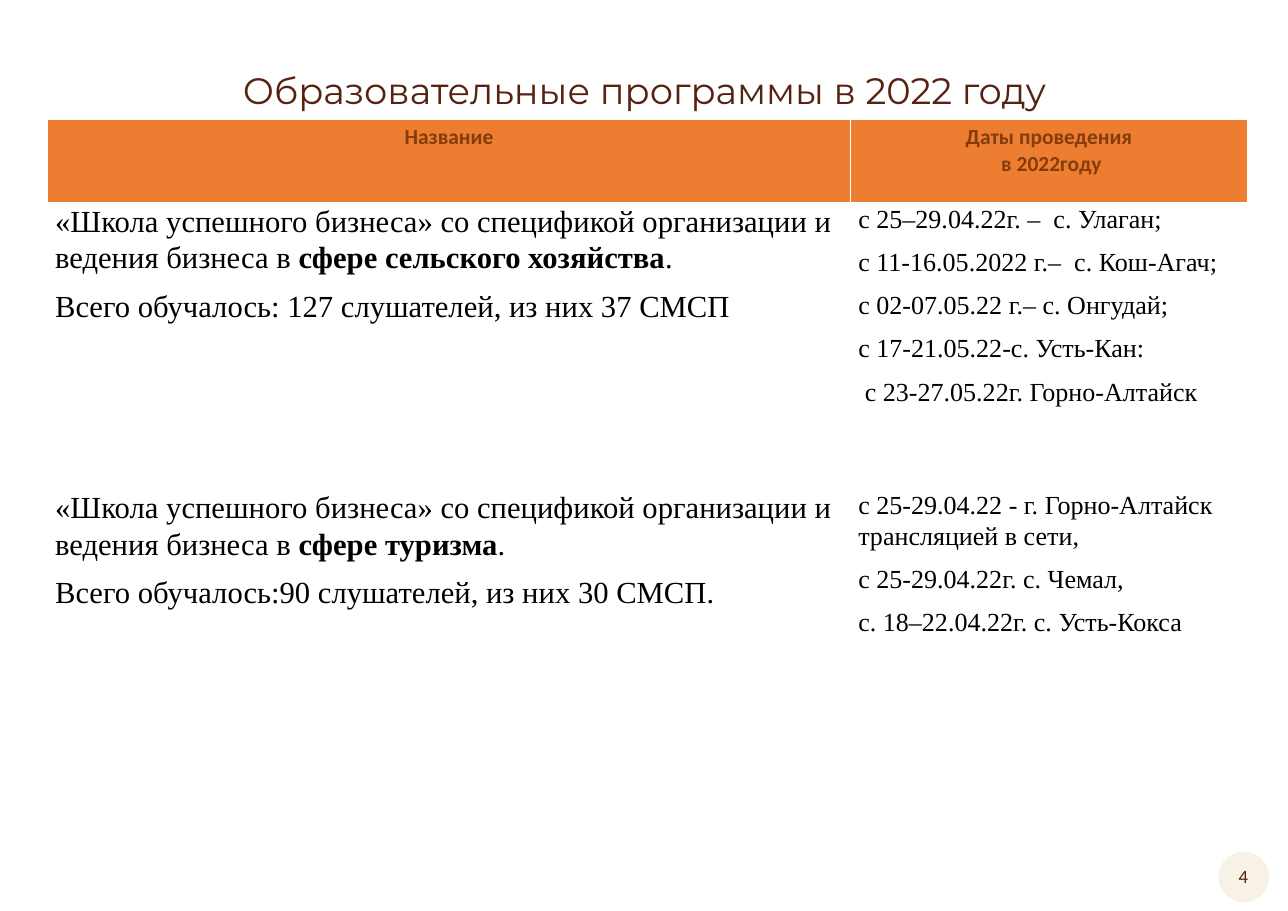
from pptx import Presentation
from pptx.dml.color import RGBColor
from pptx.enum.shapes import MSO_SHAPE
from pptx.enum.text import MSO_ANCHOR, MSO_AUTO_SIZE, PP_ALIGN
from pptx.util import Pt

COLORS = {
    "brown": "562212",
    "rust": "843C0B",
    "orange": "ED7D31",
    "cream": "F7F2E5",
    "black": "000000",
}


def apply_format(target, values):
    for name, value in values.items():
        setattr(target, name, value)


def add_runs(paragraph, texts, color, font_values, paragraph_values):
    apply_format(paragraph, paragraph_values)
    for index, text in enumerate(texts):
        run = paragraph.add_run()
        run.text = text
        run.font.color.rgb = RGBColor.from_string(COLORS[color])
        apply_format(run.font, font_values)
        if index == 1:
            run.font.bold = True


centered = {"alignment": PP_ALIGN.CENTER}
spaced = {"line_spacing": 1.07, "space_after": Pt(8), "alignment": PP_ALIGN.LEFT}
header_font = {"name": "Calibri", "size": Pt(14), "bold": True}
frame_values = {
    "word_wrap": True,
    "auto_size": MSO_AUTO_SIZE.NONE,
    "vertical_anchor": MSO_ANCHOR.TOP,
}

presentation = Presentation()
apply_format(presentation, {"slide_width": Pt(841.7), "slide_height": Pt(595.4)})
slide = presentation.slides.add_slide(presentation.slide_layouts[5])

badge = slide.shapes.add_shape(MSO_SHAPE.OVAL, Pt(796.3), Pt(556.6), Pt(33.1), Pt(33.1))
badge.shadow.inherit = False
badge.fill.solid()
badge.fill.fore_color.rgb = RGBColor.from_string(COLORS["cream"])
badge.line.fill.background()

page_number = slide.shapes.add_textbox(Pt(794.2), Pt(561.6), Pt(36.7), Pt(22.3))
apply_format(page_number.text_frame, frame_values)
add_runs(page_number.text_frame.paragraphs[0], ["4"], "brown",
         {"name": "Calibri", "size": Pt(12.3)}, centered)

title = slide.shapes.title
apply_format(title, {"left": Pt(119.5), "top": Pt(41), "width": Pt(603.4), "height": Pt(36)})
apply_format(title.text_frame, frame_values)
add_runs(title.text_frame.paragraphs[0], ["Образовательные программы в 2022 году"], "brown",
         {"name": "Montserrat", "size": Pt(24)}, centered)

headers = [["Название"], ["Даты проведения", " в 2022году"]]
school = "«Школа успешного бизнеса» со спецификой организации и ведения бизнеса в "
programs = [
    (
        [[school, "сфере сельского хозяйства", "."],
         ["Всего обучалось: 127 слушателей, из них 37 СМСП"]],
        [["с 25–29.04.22г. –  с. Улаган;"],
         ["с 11-16.05.2022 г.–  с. Кош-Агач;"],
         ["с 02-07.05.22 г.– с. Онгудай;"],
         ["с 17-21.05.22-с. Усть-Кан:"],
         [" с 23-27.05.22г. Горно-Алтайск"]],
    ),
    (
        [[school, "сфере туризма", "."],
         ["Всего обучалось:90 слушателей, из них 30 СМСП."]],
        [["с 25-29.04.22 - г. Горно-Алтайск трансляцией в сети,"],
         ["с 25-29.04.22г. с. Чемал,"],
         ["с. 18–22.04.22г. с. Усть-Кокса"]],
    ),
]
column_widths = [524.9, 259.2]
row_heights = [54.7, 187.2, 201.6]
body_sizes = [20, 17]

table = slide.shapes.add_table(
    len(row_heights), len(column_widths), Pt(31), Pt(77.8),
    Pt(sum(column_widths)), Pt(sum(row_heights))).table
table.horz_banding = False
for column, width in zip(table.columns, column_widths):
    column.width = Pt(width)
for row, height in zip(table.rows, row_heights):
    row.height = Pt(height)

for column_index, lines in enumerate(headers):
    cell = table.cell(0, column_index)
    cell.fill.solid()
    cell.fill.fore_color.rgb = RGBColor.from_string(COLORS["orange"])
    for index, line in enumerate(lines):
        frame = cell.text_frame
        paragraph = frame.add_paragraph() if index else frame.paragraphs[0]
        add_runs(paragraph, [line], "rust", header_font, centered)

cell_margins = {"margin_left": Pt(5), "margin_right": Pt(5), "margin_top": 0, "margin_bottom": 0}
for row_index, program in enumerate(programs, start=1):
    for column_index, lines in enumerate(program):
        cell = table.cell(row_index, column_index)
        cell.fill.background()
        apply_format(cell, cell_margins)
        body_font = {"name": "Times New Roman", "size": Pt(body_sizes[column_index]), "bold": False}
        for index, texts in enumerate(lines):
            frame = cell.text_frame
            paragraph = frame.add_paragraph() if index else frame.paragraphs[0]
            add_runs(paragraph, texts, "black", body_font, spaced)

presentation.save("out.pptx")
